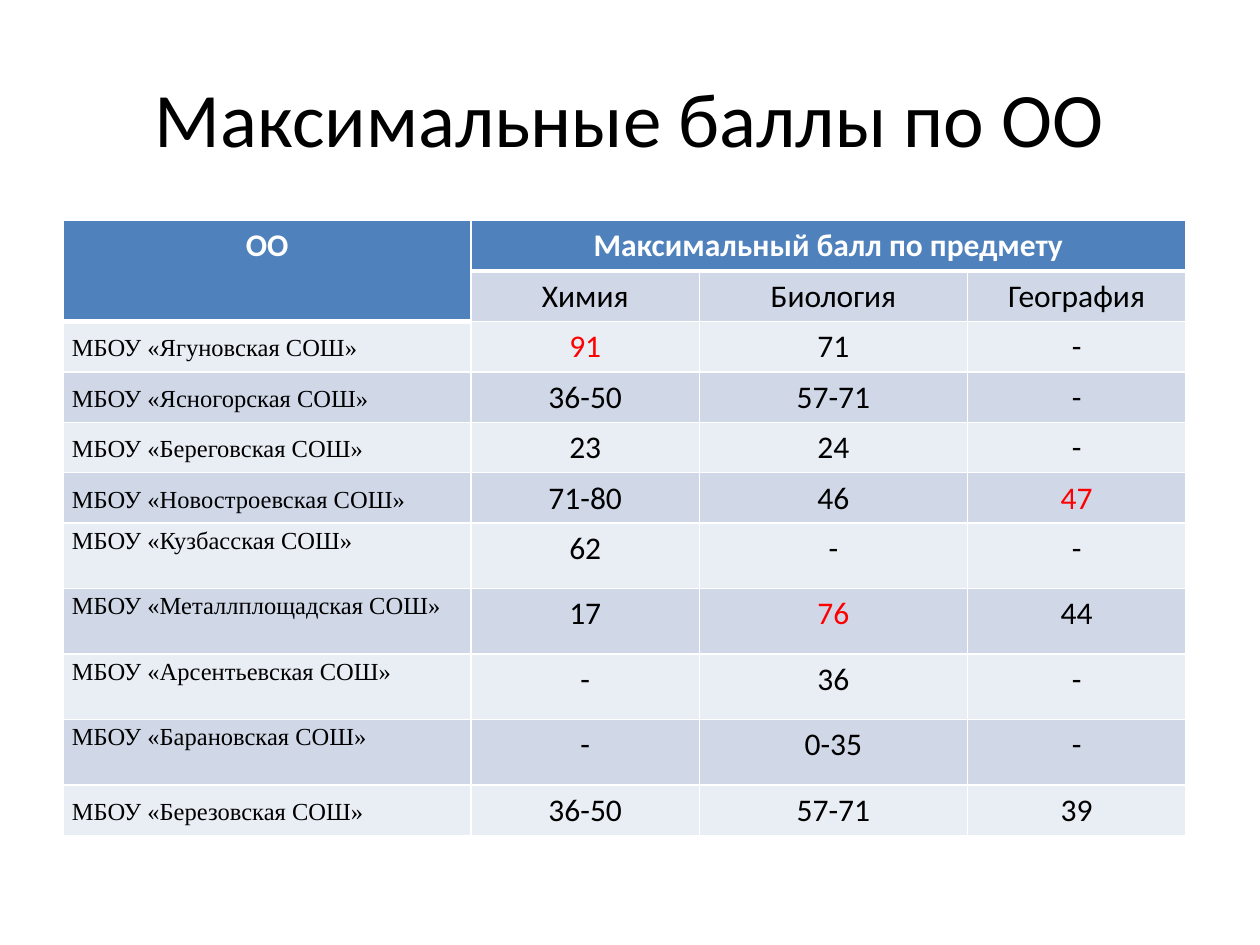
from lxml.etree import SubElement
from pptx import Presentation
from pptx.dml.color import RGBColor
from pptx.enum.text import MSO_ANCHOR as ANCHOR, PP_ALIGN as ALIGN
from pptx.oxml.ns import qn
from pptx.util import Inches, Pt

BLACK = RGBColor(0x00, 0x00, 0x00)
WHITE = RGBColor(0xFF, 0xFF, 0xFF)
RED = RGBColor(0xFF, 0x00, 0x00)
BLUE = RGBColor(0x4F, 0x81, 0xBD)
BANDS = (RGBColor(0xE9, 0xED, 0xF4), RGBColor(0xD0, 0xD8, 0xE8))

THIN, THICK = 1, 3
COL_WIDTHS = (3.24, 1.81, 2.13, 1.73)
ROW_HEIGHT, TALL_ROW_HEIGHT = 0.4, 0.52

SUBJECTS = ("Химия", "Биология", "География")
SCORES = (
    ("Ягуновская", "91", "71", "-"),
    ("Ясногорская", "36-50", "57-71", "-"),
    ("Береговская", "23", "24", "-"),
    ("Новостроевская", "71-80", "46", "47"),
    ("Кузбасская", "62", "-", "-"),
    ("Металлплощадская", "17", "76", "44"),
    ("Арсентьевская", "-", "36", "-"),
    ("Барановская", "-", "0-35", "-"),
    ("Березовская", "36-50", "57-71", "39"),
)
BEST_SCORES = {"91", "76", "47"}
TALL_SCHOOLS = {"Кузбасская", "Металлплощадская", "Арсентьевская", "Барановская"}


def write(tf, text, size=18, font="Calibri", color=BLACK, bold=False,
          align=ALIGN.CENTER, spacing=None):
    p = tf.paragraphs[0]
    p.alignment = align
    p.line_spacing = spacing
    r = p.add_run()
    r.text = text
    r.font.size = Pt(size)
    r.font.name = font
    r.font.bold = bold
    r.font.color.rgb = color


def style_cell(cell, fill, top=THIN, bottom=THIN):
    """Fill a cell and give it white borders; widths are in points."""
    tc_pr = cell._tc.get_or_add_tcPr()
    widths = {"a:lnL": THIN, "a:lnR": THIN, "a:lnT": top, "a:lnB": bottom}
    for tag, width in widths.items():
        ln = SubElement(tc_pr, qn(tag), w=str(Pt(width)))
        SubElement(SubElement(ln, qn("a:solidFill")), qn("a:srgbClr"), val=str(WHITE))
    cell.fill.solid()
    cell.fill.fore_color.rgb = fill


def add_title(slide, left, top, width, height):
    tf = slide.shapes.add_textbox(left, top, width, height).text_frame
    tf.word_wrap = True
    tf.vertical_anchor = ANCHOR.MIDDLE
    write(tf, "Максимальные баллы по ОО", size=44)


def fill_header(table):
    for col in range(len(COL_WIDTHS)):
        style_cell(table.cell(0, col), BLUE, bottom=THICK)
    style_cell(table.cell(1, 0), BLUE, bottom=THICK)
    table.cell(0, 0).merge(table.cell(1, 0))
    table.cell(0, 1).merge(table.cell(0, len(SUBJECTS)))
    for col, text in enumerate(("ОО", "Максимальный балл по предмету")):
        write(table.cell(0, col).text_frame, text, color=WHITE, bold=True)
    for col, subject in enumerate(SUBJECTS, 1):
        cell = table.cell(1, col)
        style_cell(cell, BANDS[1], top=THICK)
        write(cell.text_frame, subject)


def fill_school_row(table, row, school, scores):
    band = BANDS[row % 2]
    cell = table.cell(row, 0)
    style_cell(cell, band, top=THICK if row == 2 else THIN)
    cell.margin_left = cell.margin_right = Inches(0.07)
    cell.margin_top = cell.margin_bottom = 0
    cell.vertical_anchor = ANCHOR.TOP if school in TALL_SCHOOLS else ANCHOR.MIDDLE
    write(cell.text_frame, f"МБОУ «{school} СОШ»", size=14, font="Times New Roman",
          align=ALIGN.LEFT, spacing=1.15)
    for col, score in enumerate(scores, 1):
        cell = table.cell(row, col)
        style_cell(cell, band)
        write(cell.text_frame, score, color=RED if score in BEST_SCORES else BLACK)


def add_score_table(slide, left, top, width):
    heights = [ROW_HEIGHT] * 2 + [
        TALL_ROW_HEIGHT if school in TALL_SCHOOLS else ROW_HEIGHT
        for school, *_ in SCORES]
    table = slide.shapes.add_table(len(heights), len(COL_WIDTHS), left, top,
                                   width, Inches(sum(heights))).table
    for column, share in zip(table.columns, COL_WIDTHS):
        column.width = int(width * share / sum(COL_WIDTHS))
    for row, height in zip(table.rows, heights):
        row.height = Inches(height)
    fill_header(table)
    for row, (school, *scores) in enumerate(SCORES, 2):
        fill_school_row(table, row, school, scores)


def main():
    prs = Presentation()
    prs.slide_width, prs.slide_height = Inches(10), Inches(7.5)
    slide = prs.slides.add_slide(prs.slide_layouts[6])
    add_title(slide, Inches(0.5), Inches(0.3), Inches(9), Inches(1.25))
    add_score_table(slide, Inches(0.5), Inches(1.75), Inches(8.91))
    prs.save("out.pptx")


if __name__ == "__main__":
    main()
